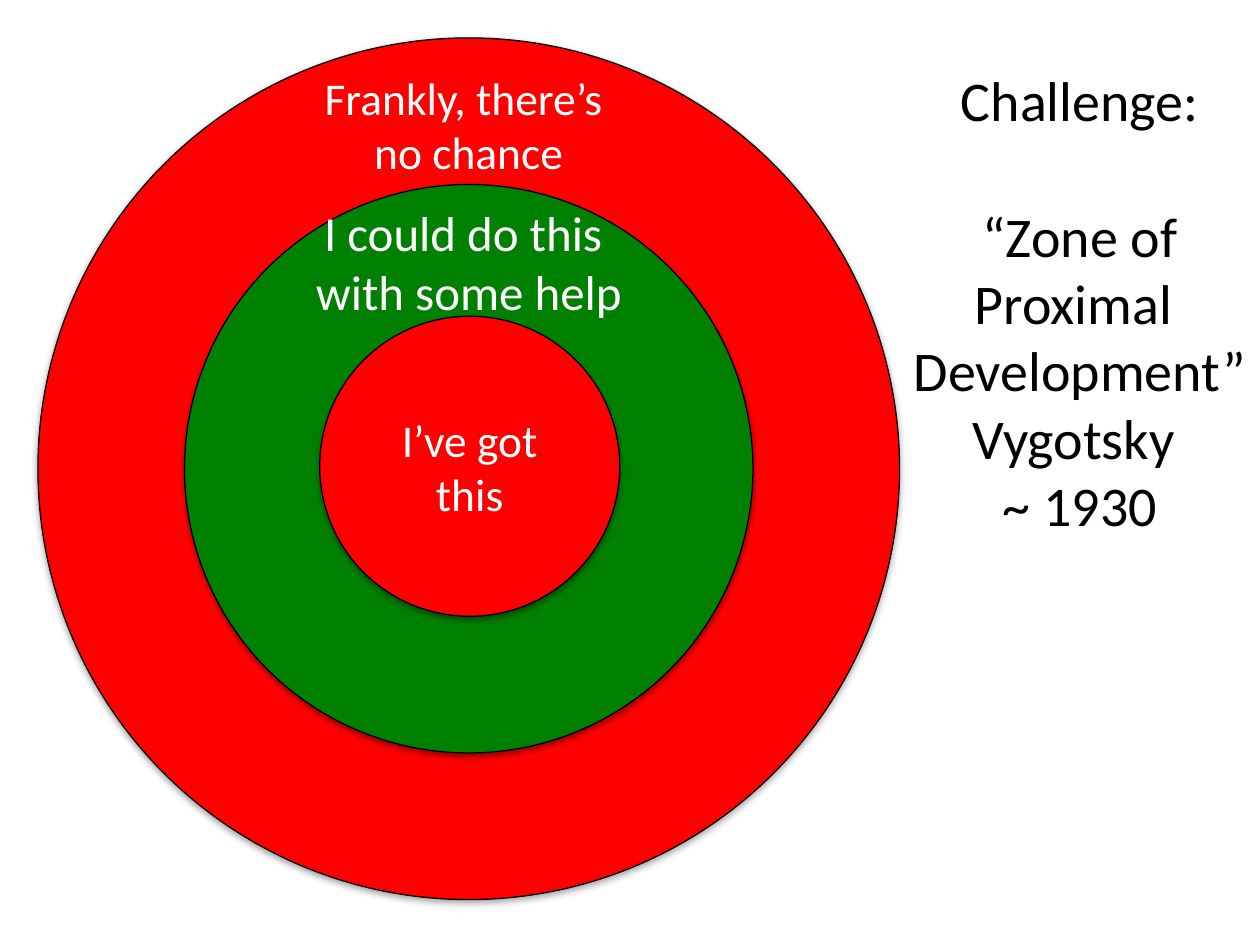
from lxml import etree
from pptx import Presentation
from pptx.dml.color import RGBColor
from pptx.enum.shapes import MSO_SHAPE
from pptx.enum.text import MSO_ANCHOR, PP_ALIGN
from pptx.oxml.ns import qn
from pptx.util import Cm, Pt

OVAL = MSO_SHAPE.OVAL
CENTER = PP_ALIGN.CENTER
TOP, MIDDLE = MSO_ANCHOR.TOP, MSO_ANCHOR.MIDDLE
COLORS = {"red": "FF0000", "green": "008000", "black": "000000", "white": "FFFFFF"}


def color(name):
    return RGBColor.from_string(COLORS[name])


def write_text(frame, lines, *, font, size, tint, anchor=TOP, gaps=None):
    """Fill a text frame with centred lines; gaps maps line index to space before."""
    frame.word_wrap = True
    frame.vertical_anchor = anchor
    for index, line in enumerate(lines):
        para = frame.paragraphs[0] if index == 0 else frame.add_paragraph()
        para.alignment = CENTER
        if gaps and index in gaps:
            para.space_before = Pt(gaps[index])
        span = para.add_run()
        span.text = line
        span.font.name = font
        span.font.size = Pt(size)
        span.font.color.rgb = color(tint)


class ZoneSlide:
    font = "Calibri"

    def __init__(self, deck):
        self.page = deck.slides.add_slide(deck.slide_layouts[6])
        self.rings = self.page.shapes.add_group_shape()

    def ring(self, center_x, center_y, diameter, fill):
        """Add a circle with a thin outline and a soft shadow below."""
        left, top = center_x - diameter / 2, center_y - diameter / 2
        circle = self.rings.shapes.add_shape(
            OVAL, Cm(left), Cm(top), Cm(diameter), Cm(diameter))
        circle.fill.solid()
        circle.fill.fore_color.rgb = color(fill)
        circle.line.color.rgb = color("black")
        circle.line.width = Pt(0.75)
        circle.shadow.inherit = False
        effects = circle._element.spPr.find(qn("a:effectLst"))
        shadow = etree.SubElement(
            effects, qn("a:outerShdw"), blurRad=str(Pt(3.1)), dist=str(Pt(1.8)),
            dir="5400000", rotWithShape="0")
        shade = etree.SubElement(shadow, qn("a:srgbClr"), val=COLORS["black"])
        etree.SubElement(shade, qn("a:alpha"), val="35000")
        return circle

    def label(self, left, top, width, height, lines, *, size, tint,
              top_inset=0.0, gaps=None):
        """Add a text box whose text starts top_inset below its upper edge."""
        box = self.page.shapes.add_textbox(Cm(left), Cm(top), Cm(width), Cm(height))
        box.text_frame.margin_top = Cm(top_inset)
        write_text(box.text_frame, lines, font=self.font, size=size, tint=tint, gaps=gaps)


def main():
    deck = Presentation()
    deck.slide_width, deck.slide_height = Cm(25.4), Cm(19.05)
    slide = ZoneSlide(deck)

    # Concentric zones, from the outside in
    middle = 9.45
    slide.ring(middle, middle, 17.37, "red")
    slide.ring(middle, middle, 11.46, "green")
    core = slide.ring(9.47, 9.4, 6.05, "red")
    write_text(core.text_frame, ["I’ve got this"], font=slide.font, size=26,
               tint="white", anchor=MIDDLE)

    # Labels in the upper part of the two outer zones
    label_width = 8
    label_left = middle - label_width / 2
    slide.label(label_left, 1.41, label_width, 2.25,
                ["Frankly, there’s ", "no chance"], size=26, tint="white")
    slide.label(label_left, 4.08, label_width, 2.42,
                ["I could do this ", "with some help"], size=28, tint="white")

    # Heading and source of the idea
    slide.label(18.14, 0, 7.26, 12.22,
                ["Challenge:", "“Zone of Proximal ", "Development”", "Vygotsky ", "~ 1930"],
                size=32, tint="black", top_inset=1.33, gaps={1: 39})

    deck.save("out.pptx")


if __name__ == "__main__":
    main()
